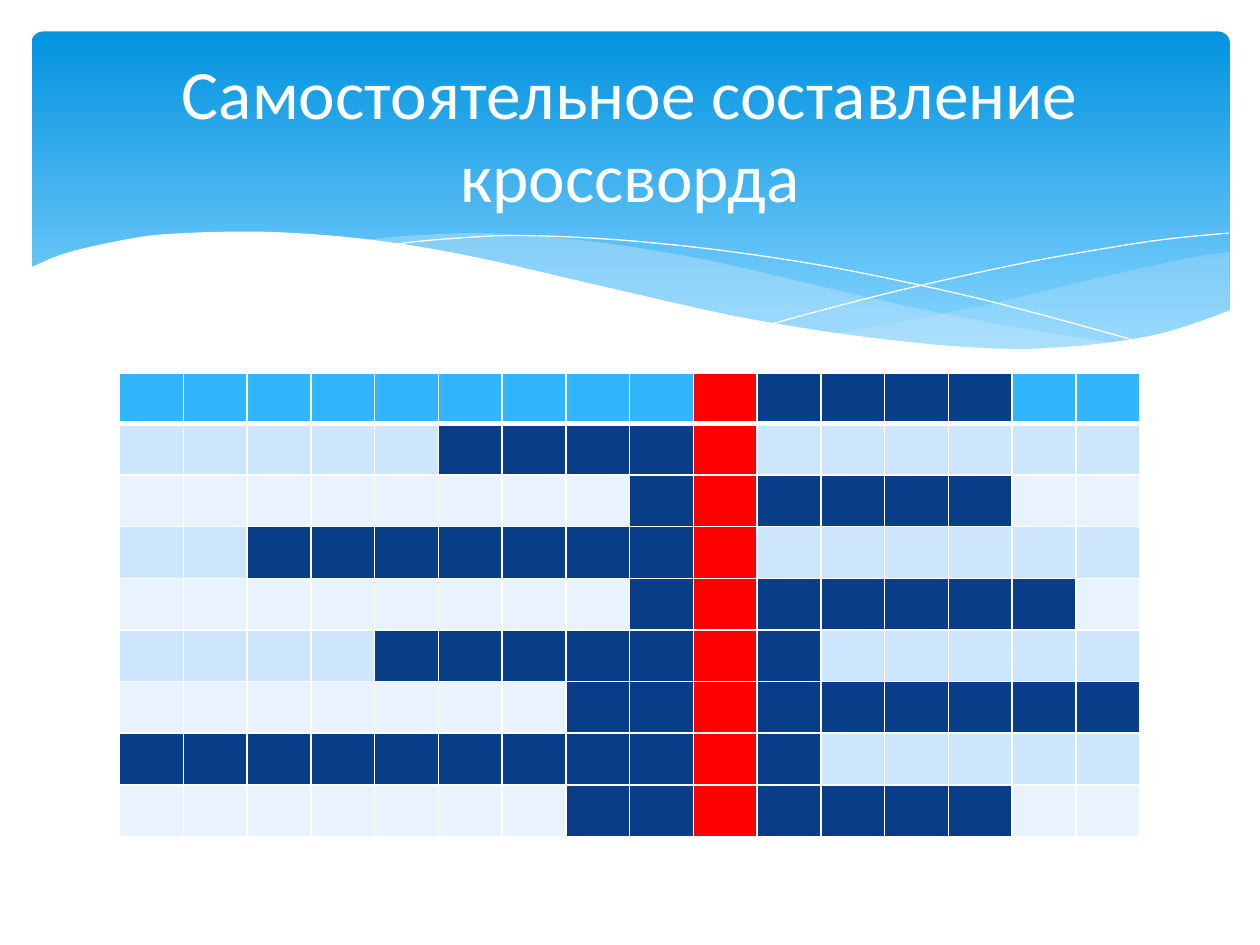
from dataclasses import dataclass

from lxml import etree
from pptx import Presentation, util as u
from pptx.dml.color import RGBColor
from pptx.enum import shapes, text
from pptx.oxml.ns import qn

COLORS = {
    "white": "FFFFFF", "sky_top": "0293E0", "sky_bottom": "83D3FE", "wave": "C6E7FC",
    "header": "31B6FD", "odd_row": "CEE5FE", "even_row": "E8F3FF",
    "letter": "073E87", "keyword": "FF0000",
}
COLUMNS, KEY_COLUMN = 16, 9
Points = list[tuple[float, float]]


@dataclass
class Word:
    """First and last grid column that a crossword answer covers."""
    first: int
    last: int


@dataclass
class Wave:
    """Smooth edges, joined by straight sides; opacity None means a line only."""
    edges: list[Points]
    color: str = "wave"
    opacity: int | None = None


WORDS = [Word(9, 13), Word(5, 9), Word(8, 13), Word(2, 9), Word(8, 14),
         Word(4, 10), Word(7, 15), Word(0, 10), Word(7, 13)]

WAVES = [
    Wave([[(9.76, 2), (9.48, 2.04), (9.06, 2.13), (8.61, 2.23), (8.05, 2.37),
           (7.29, 2.53), (6.61, 2.65)],
          [(6.61, 2.65), (7.05, 2.71), (7.57, 2.76), (8.03, 2.78), (8.44, 2.77),
           (8.81, 2.73), (9.13, 2.67), (9.42, 2.59), (9.76, 2.47)]], opacity=29),
    Wave([[(8.93, 2.73), (8.37, 2.65), (7.75, 2.54), (7.06, 2.4), (6.29, 2.22),
           (5.69, 2.08), (5.14, 1.98), (4.65, 1.91), (4.2, 1.87), (3.8, 1.85),
           (3.44, 1.86), (3.13, 1.88), (2.86, 1.91)],
          [(2.86, 1.91), (3.42, 1.99), (4.04, 2.11), (4.49, 2.22), (5.3, 2.4),
           (6.01, 2.55), (6.65, 2.66), (7.22, 2.74), (7.73, 2.77), (8.18, 2.78),
           (8.57, 2.77), (8.93, 2.73)]], opacity=40),
    Wave([[(3.09, 1.95), (3.28, 1.92), (3.63, 1.89), (4.01, 1.87), (4.5, 1.88),
           (5.1, 1.92), (5.82, 2), (6.65, 2.13), (7.6, 2.33), (8.31, 2.51),
           (9.07, 2.72)]], "white"),
    Wave([[(6.13, 2.57), (6.53, 2.46), (7.2, 2.29), (8.06, 2.1), (8.66, 1.99),
           (9.24, 1.9), (9.75, 1.85)]], "white"),
    Wave([[(9.77, 2.46), (9.5, 2.56), (9.2, 2.65), (8.87, 2.71), (8.5, 2.75),
           (8.09, 2.77), (7.61, 2.75), (7.08, 2.7), (6.48, 2.62), (5.79, 2.5),
           (5.03, 2.33), (4.47, 2.2), (3.91, 2.07), (3.4, 1.97), (2.92, 1.9),
           (2.5, 1.86), (2.11, 1.84), (1.77, 1.84), (1.46, 1.85), (1.19, 1.87),
           (0.95, 1.91), (0.67, 1.97), (0.46, 2.03), (0.23, 2.13)],
          [(0.23, 3.29), (9.77, 3.29)]], "white", opacity=100),
]


def rgb(name: str) -> RGBColor:
    return RGBColor.from_string(COLORS[name])


def smooth(knots: Points, steps: int = 5) -> Points:
    """Interpolate a Catmull-Rom curve through the knots."""
    padded = [knots[0], *knots, knots[-1]]
    curve = [knots[0]]
    for a, b, c, d in zip(padded, padded[1:], padded[2:], padded[3:]):
        for step in range(1, steps + 1):
            t = step / steps
            curve.append(tuple(
                (2 * q + (r - p) * t + (2 * p - 5 * q + 4 * r - s) * t ** 2
                 + (3 * q - p - 3 * r + s) * t ** 3) / 2
                for p, q, r, s in zip(a, b, c, d)))
    return curve


def draw_wave(slide, wave: Wave) -> None:
    points = [(u.Inches(x), u.Inches(y)) for edge in wave.edges for x, y in smooth(edge)]
    builder = slide.shapes.build_freeform(*points[0])
    builder.add_line_segments(points[1:], close=wave.opacity is not None)
    shape = builder.convert_to_shape()
    shape.shadow.inherit = False
    if wave.opacity is None:
        shape.fill.background()
        shape.line.color.rgb = rgb(wave.color)
        shape.line.width = u.Pt(0)
        return
    shape.line.fill.background()
    shape.fill.solid()
    shape.fill.fore_color.rgb = rgb(wave.color)
    if wave.opacity < 100:
        color = shape.fill._xPr.find(qn("a:solidFill"))[0]
        etree.SubElement(color, qn("a:alpha"), val=str(wave.opacity * 1000))


def draw_sky(slide) -> None:
    sky = slide.shapes.add_shape(shapes.MSO_SHAPE.ROUNDED_RECTANGLE, u.Inches(0.25),
                                 u.Inches(0.25), u.Inches(9.51), u.Inches(2.7))
    sky.adjustments[0] = 0.034
    sky.shadow.inherit = False
    sky.line.fill.background()
    sky.fill.gradient()
    sky.fill.gradient_angle = 270
    for stop, position, color in zip(sky.fill.gradient_stops, (0, 0.9),
                                     ("sky_top", "sky_bottom")):
        stop.position = position
        stop.color.rgb = rgb(color)


def add_text(slide, words: str, *, left: float, top: float, width: float, height: float,
             size: float, color: str, font: str = "Calibri") -> None:
    frame = slide.shapes.add_textbox(u.Inches(left), u.Inches(top), u.Inches(width),
                                     u.Inches(height)).text_frame
    frame.word_wrap = True
    frame.vertical_anchor = text.MSO_ANCHOR.MIDDLE
    paragraph = frame.paragraphs[0]
    paragraph.alignment = text.PP_ALIGN.CENTER
    run = paragraph.add_run()
    run.text = words
    run.font.size = u.Pt(size)
    run.font.name = font
    run.font.color.rgb = rgb(color)


def cell_color(row: int, column: int) -> str:
    if column == KEY_COLUMN:
        return "keyword"
    if WORDS[row].first <= column <= WORDS[row].last:
        return "letter"
    if row == 0:
        return "header"
    return "odd_row" if row % 2 else "even_row"


def set_borders(cell, **widths: float) -> None:
    properties = cell._tc.get_or_add_tcPr()
    for side, width in widths.items():
        line = etree.SubElement(properties, qn(f"a:ln{side}"), w=str(u.Pt(width)))
        fill = etree.SubElement(line, qn("a:solidFill"))
        etree.SubElement(fill, qn("a:srgbClr"), val=COLORS["white"])


def draw_crossword(slide) -> None:
    grid = slide.shapes.add_table(len(WORDS), COLUMNS, u.Inches(0.95), u.Inches(2.96),
                                  u.Inches(8.1), u.Inches(3.64)).table
    for row_index, row in enumerate(grid.rows):
        row.height = u.Inches(0.41 if row_index else 0.37)
        for column, cell in enumerate(row.cells):
            set_borders(cell, L=1, R=1, T=3 if row_index == 1 else 1,
                        B=1 if row_index else 3)
            cell.fill.solid()
            cell.fill.fore_color.rgb = rgb(cell_color(row_index, column))


def main() -> None:
    deck = Presentation()
    deck.slide_width, deck.slide_height = u.Inches(10), u.Inches(7.5)
    slide = deck.slides.add_slide(deck.slide_layouts[6])
    draw_sky(slide)
    for wave in WAVES:
        draw_wave(slide, wave)
    add_text(slide, "Самостоятельное составление кроссворда", left=0.5, top=0.37,
             width=9, height=1.37, size=39.6, color="white")
    draw_crossword(slide)
    deck.save("out.pptx")


if __name__ == "__main__":
    main()
